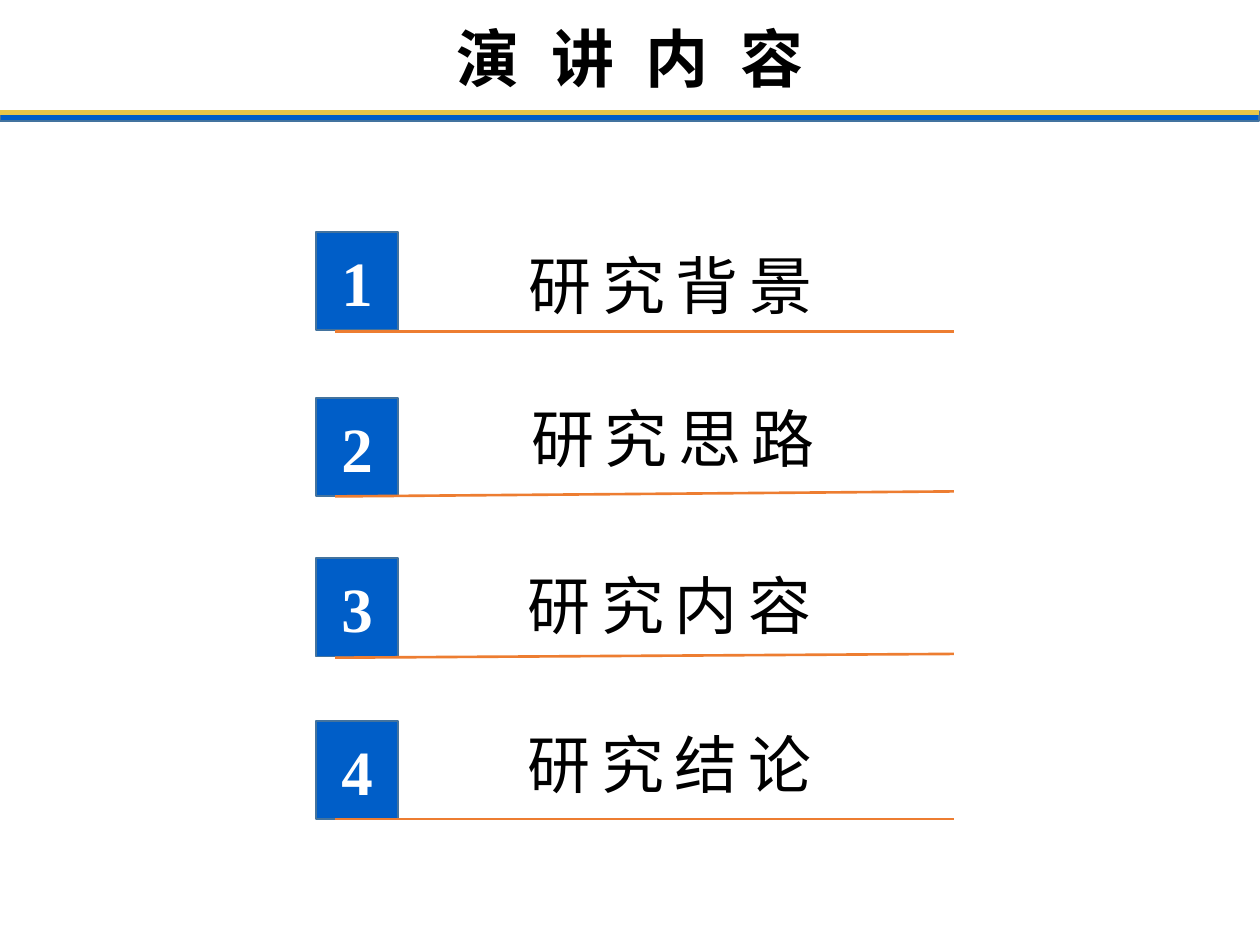
"""Build the agenda slide of a talk: a ruled title and four numbered topics."""
import pptx
import pptx.dml.color
import pptx.enum.shapes
import pptx.enum.text
import pptx.oxml.ns
import pptx.util
from lxml import etree

Inches, Pt = pptx.util.Inches, pptx.util.Pt
Rgb = pptx.dml.color.RGBColor.from_string
Shape = pptx.enum.shapes.MSO_SHAPE
Align = pptx.enum.text.PP_ALIGN
Anchor = pptx.enum.text.MSO_ANCHOR
qn = pptx.oxml.ns.qn

THEME = {
    "blue": Rgb("005EC8"), "sky": Rgb("00B0F0"), "edge": Rgb("43739E"),
    "gold": Rgb("E8C648"), "orange": Rgb("ED7D31"),
    "black": Rgb("000000"), "white": Rgb("FFFFFF"),
    "han": "Noto Sans CJK SC", "latin": "Times New Roman",
    "size": Pt(36), "thin": Pt(1), "rule": Pt(1.5),
}


def write(shape, text, face, color, bold, gap, align, frame):
    for key, value in frame.items():
        setattr(shape.text_frame, key, value)
    para = shape.text_frame.paragraphs[0]
    para.alignment = align
    run = para.add_run()
    run.text = text
    for key, value in {"size": THEME["size"], "bold": bold, "name": THEME[face]}.items():
        setattr(run.font, key, value)
    run.font.color.rgb = THEME[color]
    props = run._r.get_or_add_rPr()
    props.set("spc", str(gap * 100))
    etree.SubElement(props, qn("a:ea"), typeface=THEME[face])
    return para


def block(parent, kind, box, fill, edge):
    shape = parent.add_shape(kind, *map(Inches, box))
    shape.shadow.inherit = False
    shape.fill.solid()
    shape.fill.fore_color.rgb = THEME[fill]
    if edge:
        shape.line.color.rgb = THEME[edge]
        shape.line.width = THEME["thin"]
    else:
        shape.line.fill.background()
    return shape


deck = pptx.Presentation()
deck.slide_width, deck.slide_height = Inches(10), Inches(7.5)
slide = deck.slides.add_slide(deck.slide_layouts[6])

band = block(slide.shapes, Shape.FLOWCHART_PROCESS, (0, 0.88, 9.99, 0.08), "blue", "edge")
band.fill.gradient()
band.fill.gradient_angle = 90
for stop, place, hue in zip(band.fill.gradient_stops, (0.63, 1), ("blue", "sky")):
    stop.position = place
    stop.color.rgb = THEME[hue]
block(slide.shapes, Shape.FLOWCHART_PROCESS, (0, 0.87, 9.99, 0.04), "gold", None)

title = slide.shapes.add_textbox(*map(Inches, (1.87, 0, 6.26, 0.98)))
para = write(title, "演讲内容", "han", "black", True, 18, Align.CENTER,
             {"word_wrap": True, "vertical_anchor": Anchor.MIDDLE})
para.line_spacing = 0.9

topics = [
    ("研究背景", 1.84, 4.1, 1.91, 2.63, 2.63),
    ("研究思路", 3.16, 4.12, 3.12, 3.94, 3.9),
    ("研究内容", 4.43, 4.09, 4.45, 5.22, 5.19),
    ("研究结论", 5.72, 4.09, 5.71, 6.5, 6.5),
]
for num, (topic, top, left, head, start, end) in enumerate(topics, 1):
    group = slide.shapes.add_group_shape().shapes
    badge = block(group, Shape.RECTANGLE, (2.51, top, 0.65, 0.78), "blue", "edge")
    write(badge, str(num), "latin", "white", True, 0, Align.CENTER,
          {"word_wrap": True, "vertical_anchor": Anchor.MIDDLE})
    rule = group.add_connector(pptx.enum.shapes.MSO_CONNECTOR.STRAIGHT,
                               *map(Inches, (2.66, start, 7.57, end)))
    rule.line.color.rgb = THEME["orange"]
    rule.line.width = THEME["rule"]
    etree.SubElement(rule._element.spPr, qn("a:effectLst"))
    label = group.add_textbox(*map(Inches, (left, head, 2.56, 0.71)))
    write(label, topic, "han", "black", False, 6, Align.LEFT,
          {"word_wrap": False, "auto_size": pptx.enum.text.MSO_AUTO_SIZE.SHAPE_TO_FIT_TEXT})

deck.save("out.pptx")
